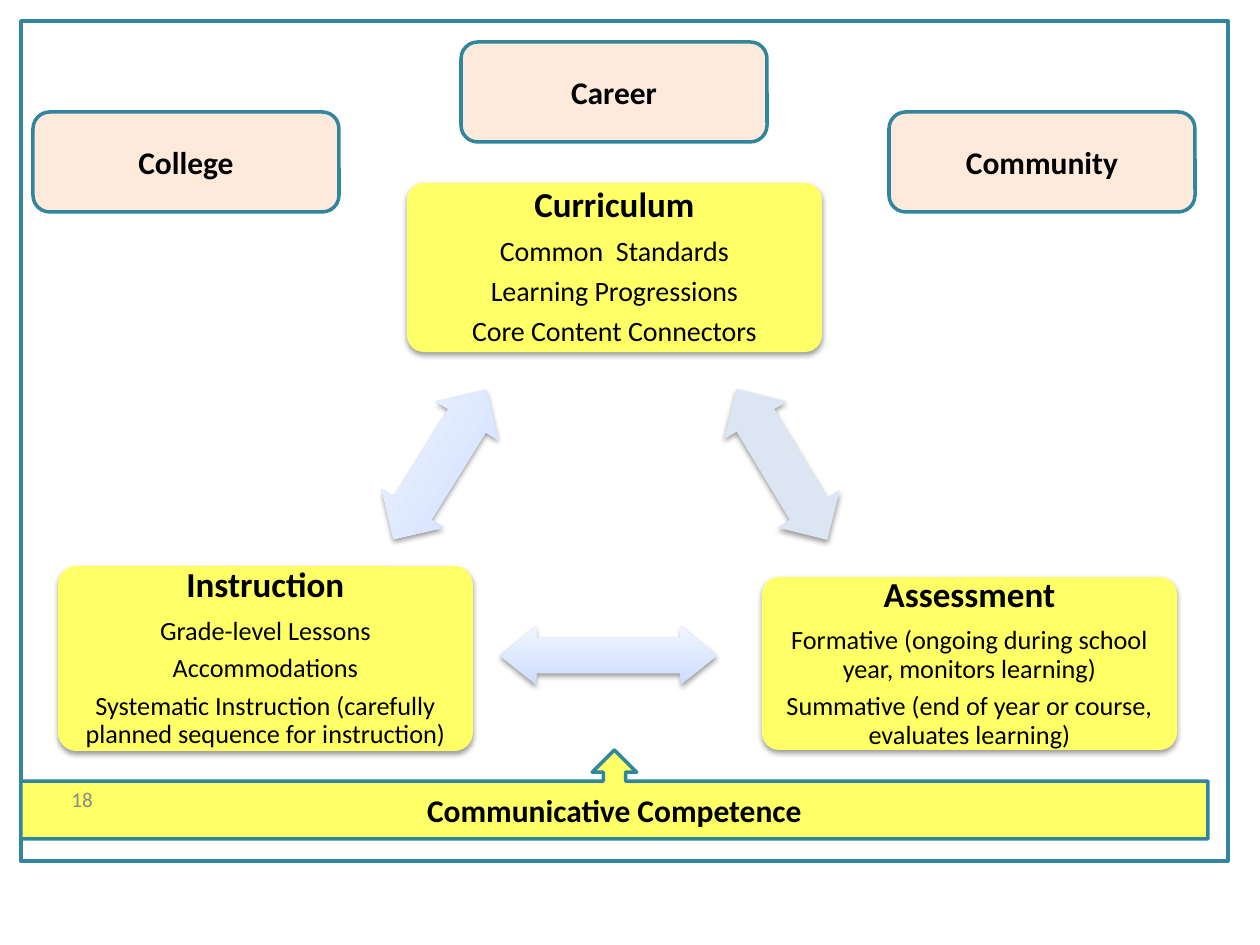
from lxml import etree
from pptx import Presentation
from pptx import util as u
from pptx.dml.color import RGBColor
from pptx.enum import shapes, text
from pptx.oxml import parse_xml

PX = u.Inches(1) / 126
COLORS = {"teal": "31859C", "peach": "FDEADA", "yellow": "FFFF66", "black": "000000",
          "gray": "898989", "pale": "DCE6F2", "blue_dark": "CDDDFF", "blue_light": "F1F5FF"}
FORMS = shapes.MSO_SHAPE
DRAWING = "http://schemas.openxmlformats.org/drawingml/2006/main"
SOFT_SHADOW = (f'<a:outerShdw xmlns:a="{DRAWING}" blurRad="40000" dist="20000" dir="5400000"'
               ' rotWithShape="0"><a:srgbClr val="000000"><a:alpha val="38000"/></a:srgbClr>'
               '</a:outerShdw>')


def add_form(form, bounds, fill=None, line=None, soft=False):
    shape = page.shapes.add_shape(form, *(round(value * PX) for value in bounds))
    shape.shadow.inherit = False
    if soft:
        effects = shape.element.spPr.find(f"{{{DRAWING}}}effectLst")
        effects.append(parse_xml(SOFT_SHADOW))
    if fill:
        shape.fill.solid()
        shape.fill.fore_color.rgb = RGBColor.from_string(COLORS[fill])
    else:
        shape.fill.background()
    if line:
        shape.line.color.rgb = RGBColor.from_string(COLORS[line])
        shape.line.width = u.Pt(2)
    else:
        shape.line.fill.background()
    return shape


def write(shape, lines, color="black", align=text.PP_ALIGN.CENTER, **para_format):
    """Fill a shape with (wording, size, bold) lines."""
    frame = shape.text_frame
    frame.word_wrap = True
    frame.vertical_anchor = text.MSO_ANCHOR.MIDDLE
    for index, (wording, size, bold) in enumerate(lines):
        para = frame.paragraphs[0] if index == 0 else frame.add_paragraph()
        para.alignment = align
        for name, value in para_format.items():
            setattr(para, name, value)
        span = para.add_run()
        span.text = wording
        for name, value in {"name": "Calibri", "size": u.Pt(size), "bold": bold}.items():
            setattr(span.font, name, value)
        span.font.color.rgb = RGBColor.from_string(COLORS[color])


deck = Presentation()
deck.slide_width, deck.slide_height = u.Inches(10), u.Inches(7.5)
page = deck.slides.add_slide(deck.slide_layouts[6])

# Frame
add_form(FORMS.RECTANGLE, (21, 21, 1207, 840), line="teal")

# Goals along the top
for index, (goal, top) in enumerate([("College", 112), ("Career", 42), ("Community", 112)]):
    box = add_form(FORMS.ROUNDED_RECTANGLE, (33 + 428 * index, top, 306, 100), "peach", "teal")
    write(box, [(goal, 18, True)])

# Foundation callout
callout = add_form(FORMS.UP_ARROW_CALLOUT, (21, 750, 1187, 89), "yellow", "teal")
write(callout, [("Communicative Competence", 18, True)])

# Triangle of topics
topics = [
    ("Curriculum", (407, 183, 415, 169), 16,
     ["Common  Standards", "Learning Progressions", "Core Content Connectors"]),
    ("Instruction", (58, 566, 415, 185), 15,
     ["Grade-level Lessons", "Accommodations",
      "Systematic Instruction (carefully planned sequence for instruction)"]),
    ("Assessment", (762, 577, 415, 173), 15,
     ["Formative (ongoing during school year, monitors learning)",
      "Summative (end of year or course, evaluates learning)"]),
]
for heading, bounds, size, details in topics:
    box = add_form(FORMS.ROUNDED_RECTANGLE, bounds, "yellow", soft=True)
    box.adjustments[0] = 0.1
    for side in ("left", "top", "right", "bottom"):
        setattr(box.text_frame, f"margin_{side}", round(10 * PX))
    write(box, [(heading, 20, True)] + [(detail, size, False) for detail in details],
          line_spacing=0.9)
    for para in box.text_frame.paragraphs:
        para.space_after = round(para.runs[0].font.size * 0.35)

# Two-way arrows between topics
arrows = [((500, 626, 217, 59), 0, 0.62, None),
          ((694, 428, 176, 73), 59, 0.5, "pale"),
          ((352, 428, 176, 73), 301.9, 0.5, None)]
for bounds, rotation, head, fill in arrows:
    arrow = add_form(FORMS.LEFT_RIGHT_ARROW, bounds, fill, soft=True)
    arrow.rotation = rotation
    arrow.adjustments[0], arrow.adjustments[1] = 0.6, head
    if not fill:
        arrow.fill.gradient()
        arrow.fill.gradient_angle = 90
        for stop, shade in zip(arrow.fill.gradient_stops, ("blue_dark", "blue_light")):
            stop.color.rgb = RGBColor.from_string(COLORS[shade])

# Page number
number = page.shapes.add_textbox(*(round(value * PX) for value in (0, 774, 105, 50)))
write(number, [("18", 12, False)], "gray", text.PP_ALIGN.RIGHT)

deck.save("out.pptx")
